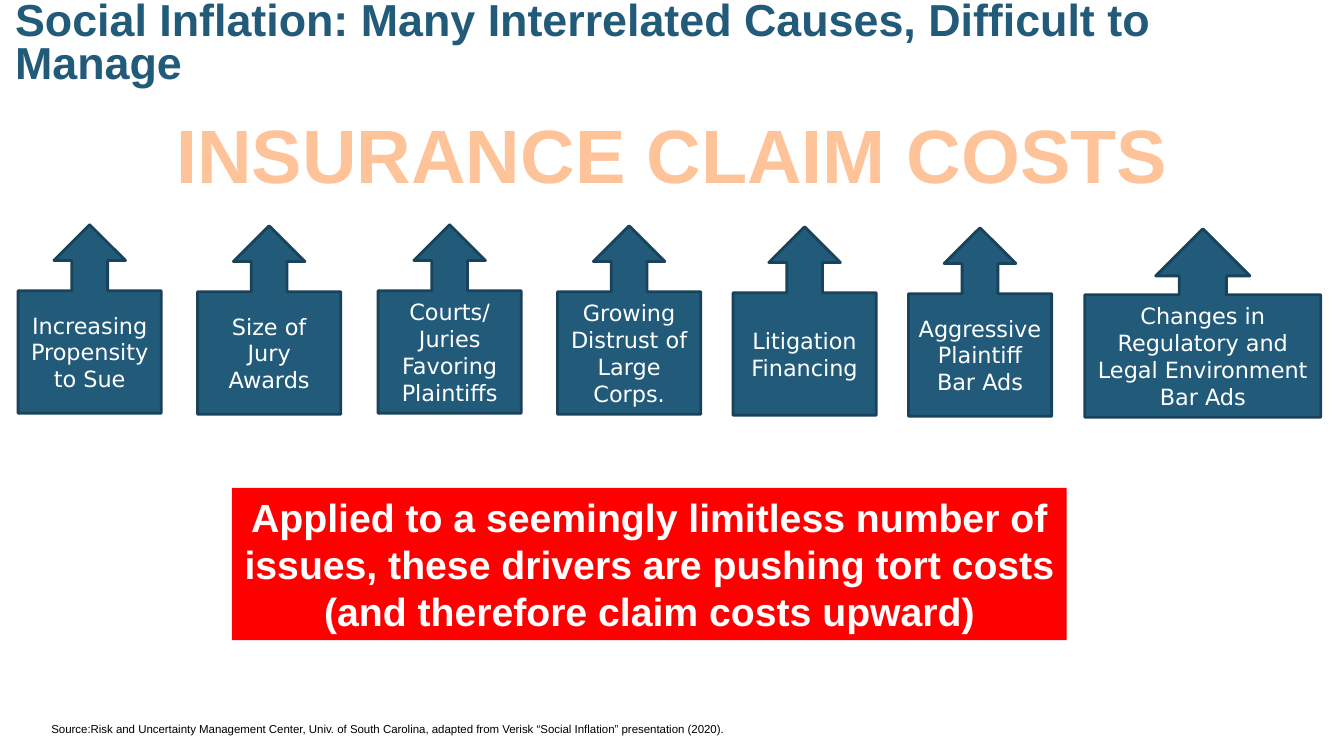
from dataclasses import dataclass

from lxml import etree
from pptx import Presentation
from pptx.dml.color import RGBColor
from pptx.enum.shapes import MSO_SHAPE
from pptx.enum.text import MSO_ANCHOR, PP_ALIGN
from pptx.oxml.ns import qn
from pptx.util import Inches, Pt

RECTANGLE = MSO_SHAPE.RECTANGLE
UP_ARROW_CALLOUT = MSO_SHAPE.UP_ARROW_CALLOUT
LEFT, CENTER = PP_ALIGN.LEFT, PP_ALIGN.CENTER
TOP, MIDDLE = MSO_ANCHOR.TOP, MSO_ANCHOR.MIDDLE


@dataclass(frozen=True)
class Theme:
    blue: str = "225A7A"
    dark_blue: str = "19435A"
    peach: str = "FFC399"
    orange: str = "FF6801"
    red: str = "FF0000"
    white: str = "FFFFFF"
    black: str = "000000"
    heading_font: str = "Arial"
    driver_font: str = "DejaVu Sans"
    title_size: float = 32
    source_size: float = 8.2
    banner_size: float = 54
    driver_size: float = 16
    conclusion_size: float = 28


THEME = Theme()


@dataclass(frozen=True)
class Box:
    left: float
    top: float
    width: float
    height: float


@dataclass(frozen=True)
class TextStyle:
    size: float
    color: str
    font: str = THEME.heading_font
    bold: bool = False
    align: PP_ALIGN = CENTER
    anchor: MSO_ANCHOR = TOP
    margins: tuple[float, float] = (0.1, 0.05)
    line_spacing: float = 1.0
    wrap: bool = True


@dataclass(frozen=True)
class Driver:
    text: str
    left: float
    top: float
    width: float = 1.42


DRIVER_HEIGHT = 1.87
DRIVERS = (
    Driver("Increasing Propensity to Sue", 0.18, 2.23),
    Driver("Size of Jury Awards", 1.96, 2.24),
    Driver("Courts/ Juries Favoring Plaintiffs", 3.75, 2.23),
    Driver("Growing Distrust of Large Corps.", 5.53, 2.24),
    Driver("Litigation Financing", 7.27, 2.25),
    Driver("Aggressive Plaintiff Bar Ads", 9.01, 2.26),
    Driver("Changes in Regulatory and Legal Environment Bar Ads", 10.76, 2.27, 2.34),
)

TITLE_STYLE = TextStyle(THEME.title_size, THEME.blue, bold=True, align=LEFT,
                        anchor=MIDDLE, margins=(0.05, 0.05), line_spacing=0.8)
SOURCE_STYLE = TextStyle(THEME.source_size, THEME.black, align=LEFT, margins=(0.08, 0.04))
BANNER_STYLE = TextStyle(THEME.banner_size, THEME.peach, bold=True, wrap=False)
DRIVER_STYLE = TextStyle(THEME.driver_size, THEME.white, font=THEME.driver_font, anchor=MIDDLE)
CONCLUSION_STYLE = TextStyle(THEME.conclusion_size, THEME.white, bold=True)


def place(box: Box) -> tuple:
    return Inches(box.left), Inches(box.top), Inches(box.width), Inches(box.height)


def set_values(target, values: dict) -> None:
    for name, value in values.items():
        setattr(target, name, value)


def write_text(shape, text: str, style: TextStyle):
    """Fill a shape with one styled paragraph and return its run."""
    horizontal, vertical = (Inches(margin) for margin in style.margins)
    set_values(shape.text_frame, {
        "word_wrap": style.wrap, "vertical_anchor": style.anchor,
        "margin_left": horizontal, "margin_right": horizontal,
        "margin_top": vertical, "margin_bottom": vertical,
    })
    paragraph = shape.text_frame.paragraphs[0]
    set_values(paragraph, {"alignment": style.align, "line_spacing": style.line_spacing})
    run = paragraph.add_run()
    run.text = text
    set_values(run.font, {"name": style.font, "size": Pt(style.size), "bold": style.bold})
    run.font.color.rgb = RGBColor.from_string(style.color)
    return run


def add_text(slide, box: Box, text: str, style: TextStyle):
    return write_text(slide.shapes.add_textbox(*place(box)), text, style)


def add_panel(slide, kind: MSO_SHAPE, box: Box, fill: str, text: str,
              style: TextStyle, border: str | None = None) -> None:
    shape = slide.shapes.add_shape(kind, *place(box))
    shape.shadow.inherit = False
    shape.fill.solid()
    shape.fill.fore_color.rgb = RGBColor.from_string(fill)
    if border:
        shape.line.color.rgb = RGBColor.from_string(border)
        shape.line.width = Pt(2)
    else:
        shape.line.fill.background()
    write_text(shape, text, style)


def outline_text(run, color: str, width: float) -> None:
    outline = etree.Element(qn("a:ln"), w=str(int(Pt(width))))
    fill = etree.SubElement(outline, qn("a:solidFill"))
    etree.SubElement(fill, qn("a:srgbClr"), val=color)
    run.font._element.insert(0, outline)


def main() -> None:
    presentation = Presentation()
    set_values(presentation, {"slide_width": Inches(13.33), "slide_height": Inches(7.5)})
    slide = presentation.slides.add_slide(presentation.slide_layouts[6])

    # Title and source line
    add_text(slide, Box(0.1, -0.14, 13.14, 1.17),
             "Social Inflation: Many Interrelated Causes, Difficult to Manage", TITLE_STYLE)
    add_text(slide, Box(0.43, 7.12, 8.84, 0.22),
             "Source:Risk and Uncertainty Management Center, Univ. of South Carolina, "
             "adapted from Verisk “Social Inflation” presentation (2020).", SOURCE_STYLE)

    # Outcome that the drivers push up
    banner = add_text(slide, Box(1.6, 1.02, 10.13, 1.01), "INSURANCE CLAIM COSTS", BANNER_STYLE)
    outline_text(banner, THEME.orange, 1.75)

    # Row of drivers
    for driver in DRIVERS:
        box = Box(driver.left, driver.top, driver.width, DRIVER_HEIGHT)
        add_panel(slide, UP_ARROW_CALLOUT, box, THEME.blue, driver.text,
                  DRIVER_STYLE, THEME.dark_blue)

    # Conclusion
    add_panel(slide, RECTANGLE, Box(2.3, 4.84, 8.28, 1.51), THEME.red,
              "Applied to a seemingly limitless number of issues, these drivers are "
              "pushing tort costs (and therefore claim costs upward)", CONCLUSION_STYLE)

    presentation.save("out.pptx")


if __name__ == "__main__":
    main()
